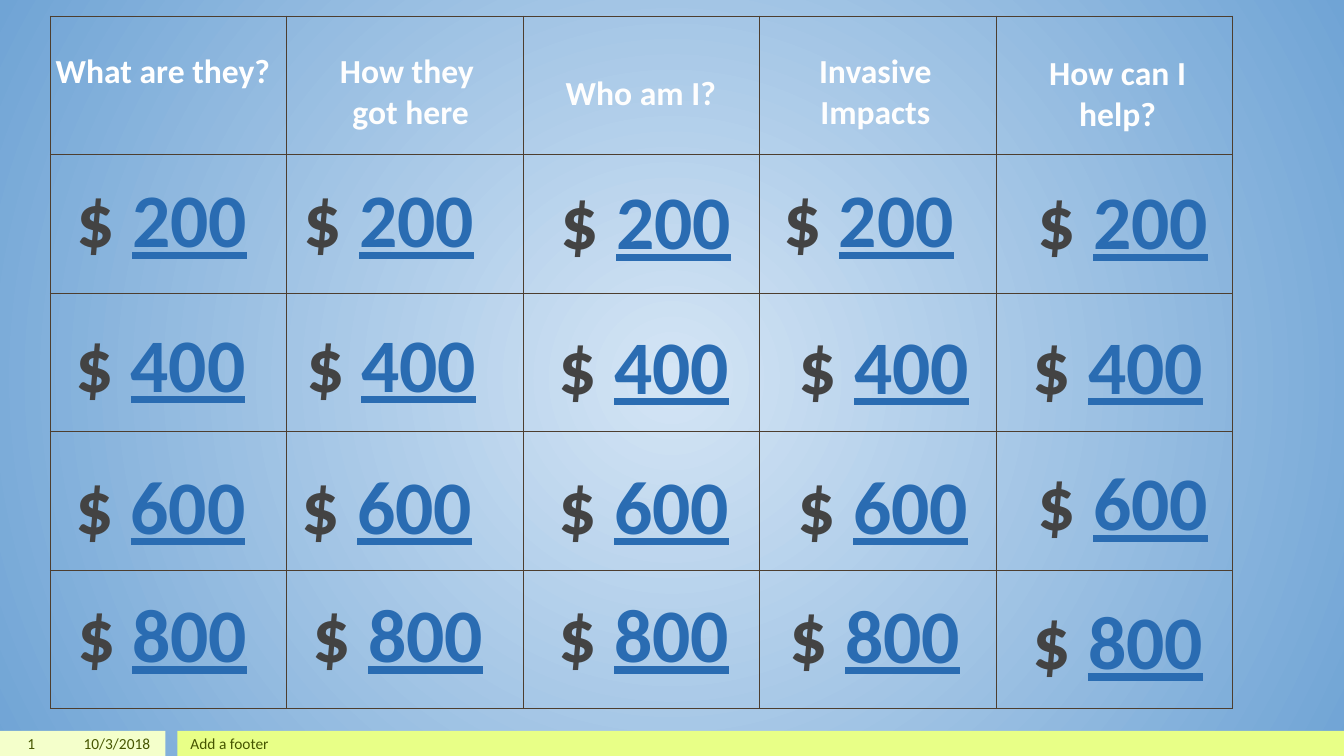
from dataclasses import dataclass
from lxml import etree
from pptx import Presentation
from pptx import util as u
from pptx.dml.color import RGBColor
from pptx.enum import shapes, text
from pptx.oxml.ns import qn


@dataclass(frozen=True)
class Theme:
    font: str = "Calibri"
    glow: str = "D4E5F5"
    sky: str = "70A4D5"
    grid: str = "4D3E2F"
    pale_bar: str = "F4FFCB"
    lime_bar: str = "E8FF87"
    footer: str = "455500"
    white: str = "FFFFFF"
    heading: str = "FEFEFE"
    dollar: str = "434343"
    link: str = "2A6CB2"
    footer_size: int = 11
    heading_size: int = 24
    amount_size: int = 54


theme = Theme()
LEFT, CENTER, RIGHT = text.PP_ALIGN.LEFT, text.PP_ALIGN.CENTER, text.PP_ALIGN.RIGHT


def add_label(left, top, width, height, lines, size, color, align=CENTER, bold=True):
    """Add a wrapped text box with one paragraph per line."""
    frame = slide.shapes.add_textbox(
        u.Cm(left), u.Cm(top), u.Cm(width), u.Cm(height)).text_frame
    frame.word_wrap = True
    frame.text = "\n".join(lines)
    for paragraph in frame.paragraphs:
        paragraph.alignment = align
        paragraph.font.name = theme.font
        paragraph.font.size = u.Pt(size)
        paragraph.font.bold = bold
        paragraph.font.color.rgb = RGBColor.from_string(color)
    return frame


deck = Presentation()
deck.slide_width, deck.slide_height = u.Cm(33.87), u.Cm(19.05)
slide = deck.slides.add_slide(deck.slide_layouts[6])

# Background: light centre fading outwards
backdrop = slide.background.fill
backdrop.gradient()
for stop, color in zip(backdrop.gradient_stops, (theme.glow, theme.sky)):
    stop.color.rgb = RGBColor.from_string(color)
gradient = slide.element.find(".//" + qn("a:gradFill"))
gradient.remove(gradient.find(qn("a:lin")))
circle = etree.SubElement(gradient, qn("a:path"))
circle.set("path", "circle")
center = etree.SubElement(circle, qn("a:fillToRect"))
for side in "ltrb":
    center.set(side, "50000")

# Footer bars
for left, width, color in ((0, 4.17, theme.pale_bar), (4.47, 29.4, theme.lime_bar)):
    bar = slide.shapes.add_shape(
        shapes.MSO_SHAPE.RECTANGLE, u.Cm(left), u.Cm(18.42), u.Cm(width), u.Cm(0.63))
    bar.shadow.inherit = False
    bar.fill.solid()
    bar.fill.fore_color.rgb = RGBColor.from_string(color)
    bar.line.fill.background()

# Board grid
COLUMN, ROW = 5.96, 3.49
board = slide.shapes.add_table(
    5, 5, u.Cm(1.27), u.Cm(0.41), u.Cm(5 * COLUMN), u.Cm(5 * ROW)).table
board.first_row = board.horz_banding = False
for column in board.columns:
    column.width = u.Cm(COLUMN)
for row in board.rows:
    row.height = u.Cm(ROW)
for cell in board.iter_cells():
    properties = cell._tc.get_or_add_tcPr()
    for edge in ("a:lnL", "a:lnR", "a:lnT", "a:lnB"):
        border = etree.SubElement(properties, qn(edge), w=str(u.Pt(1)))
        ink = etree.SubElement(border, qn("a:solidFill"))
        etree.SubElement(ink, qn("a:srgbClr"), val=theme.grid)
    cell.fill.background()

# Footer texts
for left, width, words, align in (
        (0, 1.14, "1", RIGHT),
        (1.27, 2.77, "10/3/2018", RIGHT),
        (4.55, 25.4, "Add a footer", LEFT)):
    footer = add_label(left, 18.42, width, 0.63, [words],
                       theme.footer_size, theme.footer, align, bold=False)
    footer.vertical_anchor = text.MSO_ANCHOR.MIDDLE

# Category headings: left, top, width, height, lines, colour
categories = (
    (1.12, 1.14, 5.97, 1.27, ["What are they?"], theme.white),
    (7.16, 1.14, 6.38, 2.31, ["How they ", "got here"], theme.heading),
    (13.61, 1.7, 5.08, 2.31, ["Who am I?"], theme.heading),
    (19.2, 1.14, 5.72, 2.31, ["Invasive Impacts"], theme.heading),
    (25.17, 1.19, 5.99, 2.31, ["How can I help?"], theme.heading),
)
for left, top, width, height, lines, color in categories:
    add_label(left, top, width, height, lines, theme.heading_size, color)

# Dollar amounts: middle and top of each, column by column
AMOUNT_WIDTH = 4.96
amounts = {
    "200": ((4.08, 4.22), (9.8, 4.22), (16.28, 4.27), (21.89, 4.22), (28.3, 4.26)),
    "400": ((4.04, 7.85), (9.86, 7.85), (16.23, 7.9), (22.28, 7.9), (28.17, 7.9)),
    "600": ((4.04, 11.43), (9.75, 11.43), (16.23, 11.43), (22.25, 11.43), (28.3, 11.35)),
    "800": ((4.09, 14.66), (10.03, 14.66), (16.23, 14.66), (22.05, 14.68), (28.17, 14.84)),
}
for amount, places in amounts.items():
    for middle, top in places:
        clue = add_label(middle - AMOUNT_WIDTH / 2, top, AMOUNT_WIDTH, 2.57, ["$ "],
                         theme.amount_size, theme.dollar)
        value = clue.paragraphs[0].add_run()
        value.text = amount
        value.font.underline = True
        value.font.color.rgb = RGBColor.from_string(theme.link)

deck.save("out.pptx")
